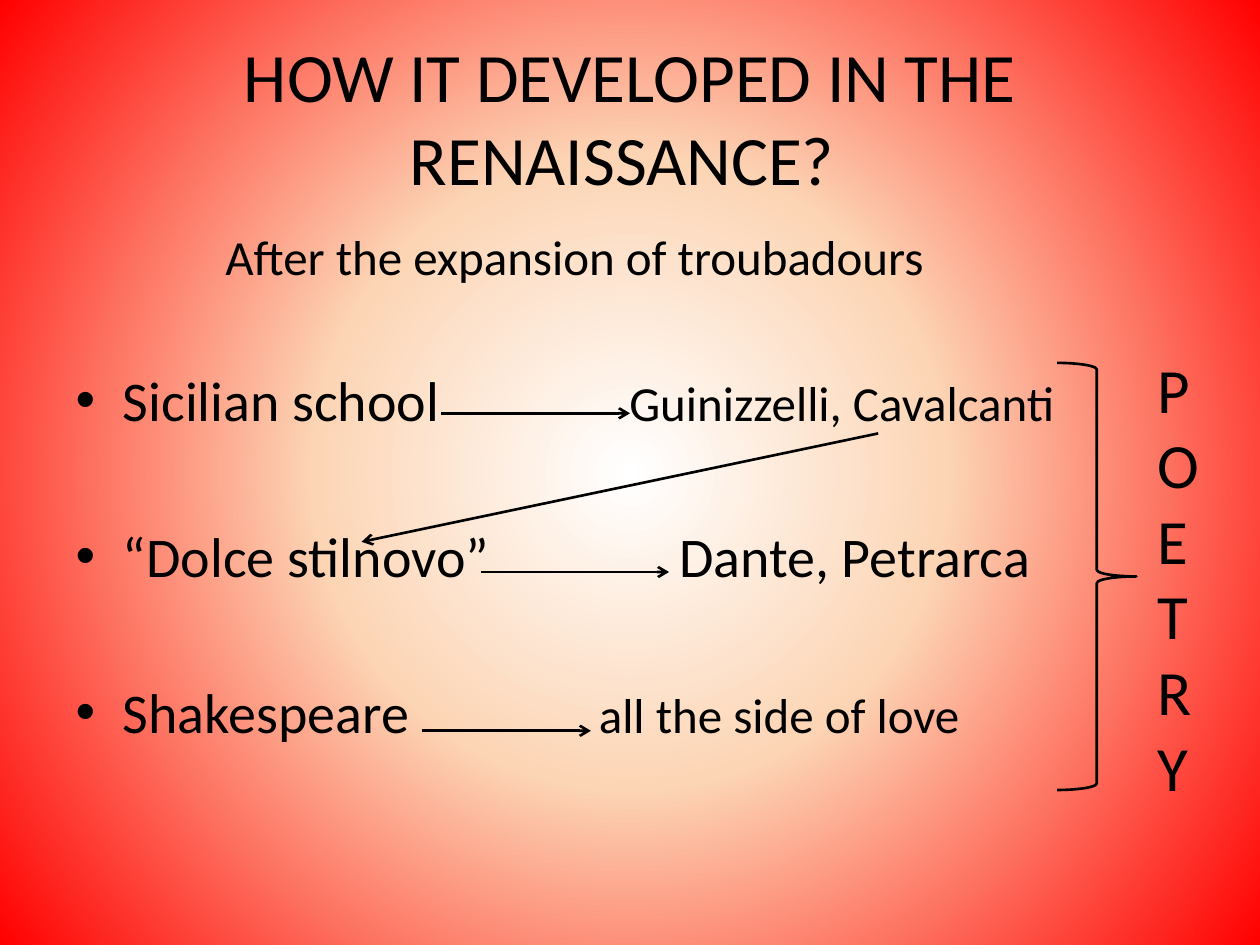
from pptx import Presentation, oxml
from pptx import util as u
from pptx.dml.color import RGBColor
from pptx.enum import shapes, text
from pptx.oxml import ns

BLACK = "000000"


def colour(hex_string):
    """Return the colour for a hex string."""
    return RGBColor.from_string(hex_string)


def place(part, box):
    """Move a shape to a box of left, top, width and height in inches."""
    part.left, part.top, part.width, part.height = map(u.Inches, box)


def add_run(paragraph, words, size, tracking=None):
    """Add one run of text, with optional letter spacing in points."""
    run = paragraph.add_run()
    run.text = words
    run.font.size = u.Pt(size)
    run.font.name = "Calibri"
    run.font.color.rgb = colour(BLACK)
    if tracking:
        run.font._element.set("spc", str(tracking * 100))


def paint_background(slide, stops):
    """Fill the background with a gradient that spreads from the centre."""
    marks = "".join(
        f'<a:gs pos="{pos * 1000}"><a:srgbClr val="{shade}"/></a:gs>' for pos, shade in stops
    )
    slide._element.cSld.insert(0, oxml.parse_xml(
        f'<p:bg {ns.nsdecls("p", "a")}><p:bgPr><a:gradFill><a:gsLst>{marks}</a:gsLst>'
        '<a:path path="circle"><a:fillToRect l="50000" t="50000" r="50000" b="50000"/></a:path>'
        '</a:gradFill><a:effectLst/></p:bgPr></p:bg>'
    ))


def write_title(slide, box, words):
    """Place the slide title."""
    title = slide.shapes.title
    place(title, box)
    frame = title.text_frame
    frame.auto_size = text.MSO_AUTO_SIZE.NONE
    frame.vertical_anchor = text.MSO_ANCHOR.MIDDLE
    frame.paragraphs[0].alignment = text.PP_ALIGN.CENTER
    add_run(frame.paragraphs[0], words, 39.6)


def write_schools(slide, box, heading, schools):
    """Place the heading and the bulleted schools with their poets."""
    body = slide.placeholders[1]
    place(body, box)
    frame = body.text_frame
    frame.auto_size = text.MSO_AUTO_SIZE.NONE
    lead = frame.paragraphs[0]
    lead.alignment = text.PP_ALIGN.CENTER
    lead.space_before = u.Pt(0)
    lead._p.get_or_add_pPr().append(oxml.parse_xml(f'<a:buNone {ns.nsdecls("a")}/>'))
    add_run(lead, heading, 28)
    for school, poets, size, gap in schools:
        item = frame.add_paragraph()
        item.space_before = u.Pt(gap)
        add_run(item, school, 32)
        add_run(item, " ", 32, tracking=101)
        add_run(item, poets, size)


def write_genre(slide, box, genre):
    """Place a brace and the genre spelled downwards beside it."""
    left, top, width, height = box
    brace = slide.shapes.add_shape(
        shapes.MSO_SHAPE.RIGHT_BRACE,
        *map(u.Inches, (left, top + 0.15, 0.63, 3.39)))
    brace.shadow.inherit = False
    brace.fill.background()
    brace.line.color.rgb = colour(BLACK)
    brace.line.width = u.Pt(1.5)
    letters = slide.shapes.add_textbox(
        *map(u.Inches, (left + 0.7, top, width - 0.7, height)))
    frame = letters.text_frame
    frame.word_wrap = True
    for index, letter in enumerate(genre):
        line = frame.add_paragraph() if index else frame.paragraphs[0]
        add_run(line, letter, 36)


def draw_arrow(slide, start, end):
    """Draw a black arrow between two points in inches."""
    arrow = slide.shapes.add_connector(
        shapes.MSO_CONNECTOR.STRAIGHT, *map(u.Inches, (*start, *end)))
    arrow.line.color.rgb = colour(BLACK)
    arrow.line.width = u.Pt(1.5)
    arrow.line._get_or_add_ln().append(
        oxml.parse_xml(f'<a:tailEnd {ns.nsdecls("a")} type="arrow"/>'))
    arrow._element.spPr.append(oxml.parse_xml(f'<a:effectLst {ns.nsdecls("a")}/>'))


def main():
    """Build the slide and save it."""
    deck = Presentation()
    deck.slide_width, deck.slide_height = u.Inches(10), u.Inches(7.5)
    slide = deck.slides.add_slide(deck.slide_layouts.get_by_name("Title and Content"))
    paint_background(slide, [(0, "FFFFFF"), (40, "FCD5B5"), (100, "FF0000")])
    write_title(slide, (0.5, 0.3, 9, 1.25), "HOW IT DEVELOPED IN THE RENAISSANCE? ")
    write_schools(slide, (0.5, 1.75, 8.12, 4.95), "After the expansion of troubadours", [
        ("Sicilian school", "Guinizzelli, Cavalcanti", 28, 45.5),
        ("“Dolce stilnovo”", "Dante, Petrarca", 32, 50.7),
        ("Shakespeare", "all the side of love", 28, 50.7),
    ])
    write_genre(slide, (8.39, 2.73, 1.25, 4.04), "POETRY")
    for start, end in [
        ((3.5, 3.28), (5, 3.28)),
        ((3.82, 4.54), (5.31, 4.54)),
        ((3.35, 5.8), (4.69, 5.8)),
        ((6.97, 3.44), (2.87, 4.3)),
    ]:
        draw_arrow(slide, start, end)
    deck.save("out.pptx")


if __name__ == "__main__":
    main()
